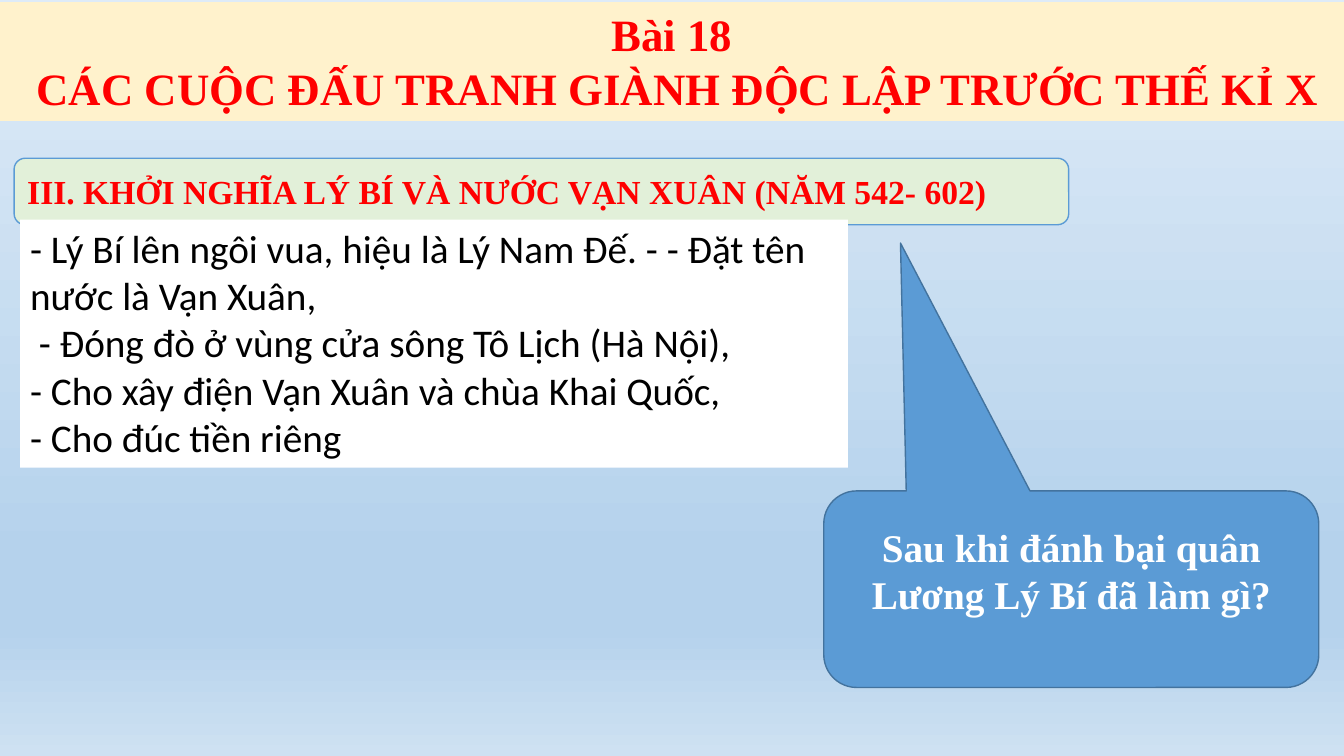
import pptx
import pptx.dml.color
import pptx.enum.shapes
import pptx.enum.text
import pptx.oxml
import pptx.oxml.ns
import pptx.util
from dataclasses import dataclass

Inches = pptx.util.Inches
Pt = pptx.util.Pt
SHAPE = pptx.enum.shapes.MSO_SHAPE
ALIGN = pptx.enum.text.PP_ALIGN
ANCHOR = pptx.enum.text.MSO_ANCHOR


@dataclass(frozen=True)
class Theme:
    serif: str = "Times New Roman"
    sans: str = "Calibri"
    red: str = "FF0000"
    white: str = "FFFFFF"
    black: str = "000000"
    cream: str = "FFF2CC"
    green: str = "E2F0D9"
    blue: str = "5B9BD5"
    dark_blue: str = "43739E"
    backdrop: tuple = ((0, "DEEBF7"), (74, "B5D2EC"), (83, "B5D2EC"), (100, "CEE1F2"))
    title_size: int = 32
    body_size: int = 28
    heading_size: int = 24


THEME = Theme()


def rgb(value):
    return pptx.dml.color.RGBColor.from_string(value)


def set_background(slide):
    """Vertical gradient with the theme's stops."""
    fill = slide.background.fill
    fill.gradient()
    fill.gradient_angle = 270
    stops = slide.background._cSld.find(".//" + pptx.oxml.ns.qn("a:gsLst"))
    for stop in list(stops):
        stops.remove(stop)
    for percent, color in THEME.backdrop:
        stops.append(pptx.oxml.parse_xml(
            f'<a:gs {pptx.oxml.ns.nsdecls("a")} pos="{percent * 1000}">'
            f'<a:srgbClr val="{color}"/></a:gs>'))


def place(sp, left, top, width, height):
    sp.left, sp.top = Inches(left), Inches(top)
    sp.width, sp.height = Inches(width), Inches(height)


def paint(sp, fill, line=None):
    sp.fill.solid()
    sp.fill.fore_color.rgb = rgb(fill)
    if line:
        sp.line.color.rgb = rgb(line)
        sp.line.width = Pt(1)
    else:
        sp.line.fill.background()


def write(sp, lines, size, color, font=THEME.serif, bold=True,
          align=ALIGN.LEFT, anchor=ANCHOR.MIDDLE):
    tf = sp.text_frame
    tf.text = "\n".join(lines)
    tf.word_wrap = True
    tf.auto_size = pptx.enum.text.MSO_AUTO_SIZE.NONE
    tf.vertical_anchor = anchor
    for p in tf.paragraphs:
        p.alignment = align
        p.line_spacing = 1.0
        p.space_before = Pt(0)
        for r in p.runs:
            r.font.name, r.font.size, r.font.bold = font, Pt(size), bold
            r.font.color.rgb = rgb(color)


def add_panel(slide, kind, box, fill, line=None):
    sp = slide.shapes.add_shape(kind, *(Inches(v) for v in box))
    sp.shadow.inherit = False
    paint(sp, fill, line)
    return sp


def add_title(slide, lines):
    sp = slide.shapes.title
    place(sp, 0, 0.02, 13.33, 1.18)
    paint(sp, THEME.cream)
    write(sp, lines, THEME.title_size, THEME.red, align=ALIGN.CENTER, anchor=ANCHOR.TOP)


def add_heading(slide, text):
    sp = add_panel(slide, SHAPE.ROUNDED_RECTANGLE, (0.14, 1.57, 10.46, 0.66),
                   THEME.green, THEME.blue)
    write(sp, [text], THEME.heading_size, THEME.red)


def add_question(slide, text):
    sp = add_panel(slide, SHAPE.ROUNDED_RECTANGULAR_CALLOUT, (8.17, 4.87, 4.91, 1.95),
                   THEME.blue, THEME.dark_blue)
    for i, value in enumerate((-0.345, -1.761, 0.167)):
        sp.adjustments[i] = value
    write(sp, [text], THEME.body_size, THEME.white, align=ALIGN.CENTER)
    # Lift the text above the middle of the bubble
    sp.text_frame.margin_bottom = Inches(0.43)


def add_answer(slide, lines):
    sp = add_panel(slide, SHAPE.RECTANGLE, (0.2, 2.18, 8.21, 2.46), THEME.white)
    write(sp, lines, THEME.body_size, THEME.black, font=THEME.sans, bold=False,
          anchor=ANCHOR.TOP)


def main():
    prs = pptx.Presentation()
    prs.slide_width, prs.slide_height = Inches(13.33), Inches(7.5)
    slide = prs.slides.add_slide(prs.slide_layouts[5])
    set_background(slide)

    # Lesson title and section heading
    add_title(slide, ["Bài 18", " CÁC CUỘC ĐẤU TRANH GIÀNH ĐỘC LẬP TRƯỚC THẾ KỈ X"])
    add_heading(slide, "III. KHỞI NGHĨA LÝ BÍ VÀ NƯỚC VẠN XUÂN (NĂM 542- 602)")

    # Question and its answer
    add_question(slide, "Sau khi đánh bại quân Lương Lý Bí đã làm gì?")
    add_answer(slide, [
        "- Lý Bí lên ngôi vua, hiệu là Lý Nam Đế. - - Đặt tên nước là Vạn Xuân,",
        " - Đóng đò ở vùng cửa sông Tô Lịch (Hà Nội),",
        "- Cho xây điện Vạn Xuân và chùa Khai Quốc,",
        "- Cho đúc tiền riêng",
    ])
    prs.save("out.pptx")


if __name__ == "__main__":
    main()
